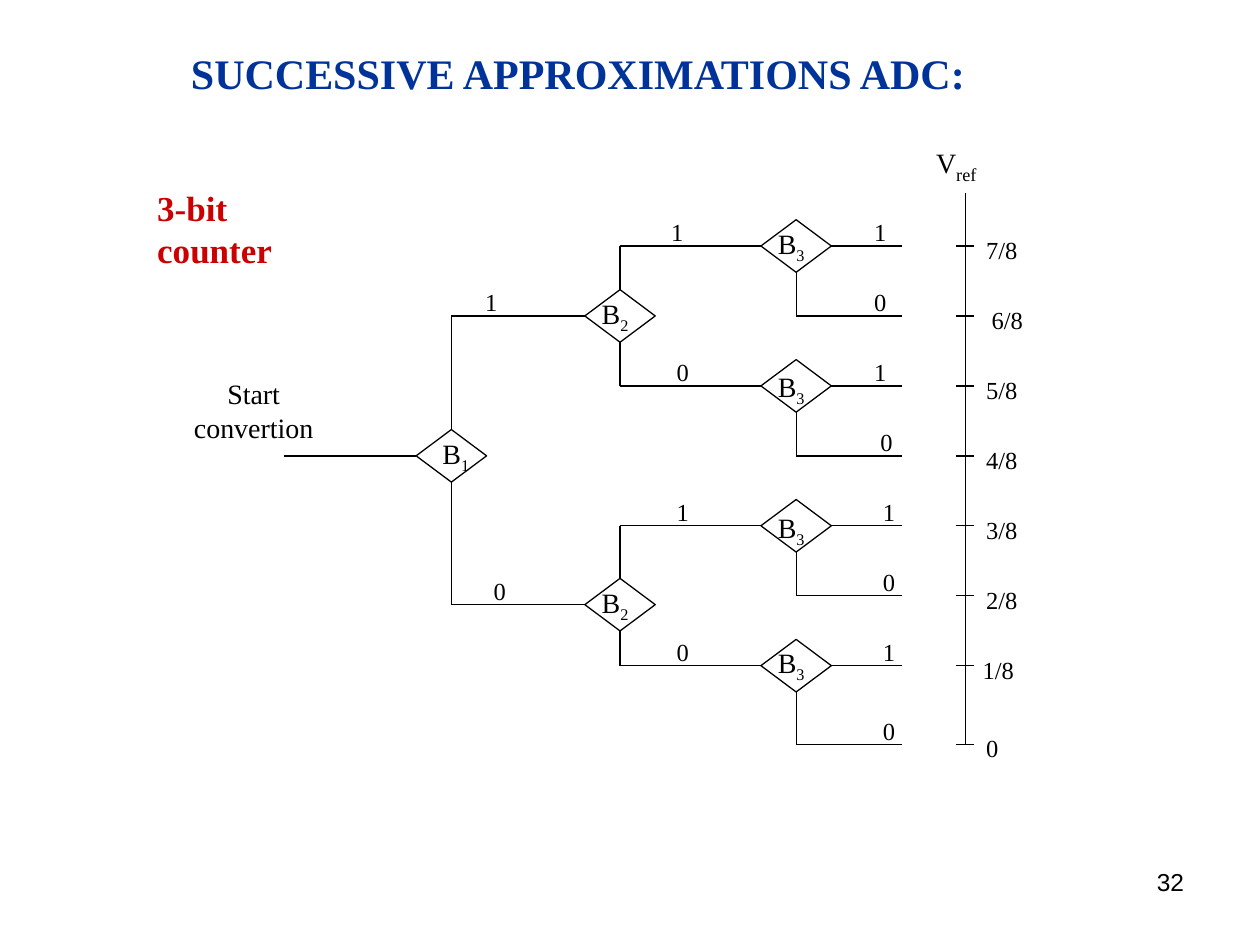
from pptx import Presentation
from pptx.dml.color import RGBColor
from pptx.enum.shapes import MSO_CONNECTOR, MSO_SHAPE
from pptx.enum.text import PP_ALIGN
from pptx.oxml.ns import qn
from pptx.util import Cm, Pt
from lxml.etree import SubElement

BLACK, NAVY, RED = "000000", "003399", "CC0000"
SERIF = "Times New Roman"

# Centimetres: the eight output levels, the last one set a little lower
LEVELS = [4.96 + 1.41 * i for i in range(7)] + [15.01]
LOW_B2_Y = 12.19
B1_X, B2_X, B3_X = 9.1, 12.5, 16.05
DIAMOND_W, DIAMOND_H = 1.42, 1.06
OUTPUT_X, AXIS_X, TICK = 18.19, 19.46, 0.18


def color(hex_code):
    return RGBColor.from_string(hex_code)


def add_run(p, text, size, hex_code=BLACK, font=SERIF, bold=False, sub=False):
    r = p.add_run()
    r.text = text
    r.font.name, r.font.size, r.font.bold = font, Pt(size), bold
    r.font.color.rgb = color(hex_code)
    if sub:
        r.font._element.set("baseline", "-25000")


def add_box(s, x, y, w, h=0.84, align=PP_ALIGN.LEFT):
    """Add an empty text box and return its text frame."""
    tf = s.shapes.add_textbox(Cm(x), Cm(y), Cm(w), Cm(h)).text_frame
    tf.word_wrap = True
    tf.margin_right = 0
    tf.paragraphs[0].alignment = align
    return tf


def add_text(s, text, x, y, w, size=14, align=PP_ALIGN.LEFT, **style):
    tf = add_box(s, x, y, w, align=align)
    add_run(tf.paragraphs[0], text, size, **style)


def add_subscripted(s, base, sub, x, y, sub_size=16):
    p = add_box(s, x, y, 1.4, 0.94).paragraphs[0]
    add_run(p, base, 16)
    add_run(p, sub, sub_size, sub=True)


def add_line(s, x1, y1, x2, y2):
    line = s.shapes.add_connector(
        MSO_CONNECTOR.STRAIGHT, Cm(x1), Cm(y1), Cm(x2), Cm(y2))
    line.line.color.rgb = color(BLACK)
    line.line.width = Pt(0.75)
    SubElement(line._element.spPr, qn("a:effectLst"))


def add_decision(s, bit, x, y, dx=-0.62, dy=-0.51):
    """Add a diamond centred on x, y; its label is offset by dx, dy."""
    sp = s.shapes.add_shape(
        MSO_SHAPE.DIAMOND, Cm(x - DIAMOND_W / 2), Cm(y - DIAMOND_H / 2),
        Cm(DIAMOND_W), Cm(DIAMOND_H))
    sp.shadow.inherit = False
    sp.fill.background()
    sp.line.color.rgb = color(BLACK)
    sp.line.width = Pt(0.75)
    add_subscripted(s, "B", bit, x + dx, y + dy)


def add_bit(s, bit, x, line_y):
    add_text(s, bit, x, line_y - 0.71, 0.76)


def add_branch(s, x, y, end_x, end_y):
    """Leave a diamond by its top or bottom corner, then turn right."""
    corner = y + DIAMOND_H / 2 if end_y > y else y - DIAMOND_H / 2
    add_line(s, x, corner, x, end_y)
    add_line(s, x, end_y, end_x, end_y)


def add_tree(s):
    half = DIAMOND_W / 2
    add_line(s, 5.72, LEVELS[3], B1_X - half, LEVELS[3])
    add_decision(s, "1", B1_X, LEVELS[3], dx=-0.43)
    for bit, y, bit_x in (("1", LEVELS[1], 9.53), ("0", LOW_B2_Y, 9.7)):
        add_branch(s, B1_X, LEVELS[3], B2_X - half, y)
        add_bit(s, bit, bit_x, y)

    for y, first, one_x in ((LEVELS[1], 0, 13.28), (LOW_B2_Y, 4, 13.39)):
        add_decision(s, "2", B2_X, y)
        for bit, level, bit_x in (("1", first, one_x), ("0", first + 2, 13.39)):
            add_branch(s, B2_X, y, B3_X - half, LEVELS[level])
            add_bit(s, bit, bit_x, LEVELS[level])

    for level, dy in zip(range(0, 8, 2), (-0.51, -0.46, -0.43, -0.53)):
        y = LEVELS[level]
        add_decision(s, "3", B3_X, y, dy=dy)
        add_line(s, B3_X + half, y, OUTPUT_X, y)
        add_branch(s, B3_X, y, OUTPUT_X, LEVELS[level + 1])

    output_bit_x = [17.37] * 3 + [17.5] + [17.55] * 4
    for bit, x, y in zip("10101010", output_bit_x, LEVELS):
        add_bit(s, bit, x, y)


def add_scale(s):
    add_subscripted(s, "V", "ref", 18.62, 2.74, sub_size=18)
    add_line(s, AXIS_X, 3.89, AXIS_X, LEVELS[-1])
    label_x = {"6/8": 19.74, "1/8": 19.56}
    for i, y in enumerate(LEVELS):
        label = f"{7 - i}/8" if i < 7 else "0"
        add_line(s, AXIS_X - TICK, y, AXIS_X + TICK, y)
        add_text(s, label, label_x.get(label, 19.63), y - 0.35, 1.2)


def add_start_label(s):
    tf = add_box(s, 3.53, 7.47, 2.92, 1.63, PP_ALIGN.CENTER)
    add_run(tf.paragraphs[0], "Start", 16)
    p = tf.add_paragraph()
    p.alignment = PP_ALIGN.CENTER
    add_run(p, "convertion", 16)


def main():
    prs = Presentation()
    prs.slide_width, prs.slide_height = Cm(25.4), Cm(19.05)
    s = prs.slides.add_slide(prs.slide_layouts[6])
    add_text(s, "SUCCESSIVE APPROXIMATIONS ADC:", 3.6, 0.84, 16.5,
             size=24, hex_code=NAVY, bold=True)
    add_text(s, "3-bit counter", 2.92, 3.63, 3.3,
             size=20, hex_code=RED, bold=True)
    add_tree(s)
    add_start_label(s)
    add_scale(s)
    add_text(s, "32", 18.21, 17.35, 5.66, align=PP_ALIGN.RIGHT, font="Arial")
    prs.save("out.pptx")


if __name__ == "__main__":
    main()
